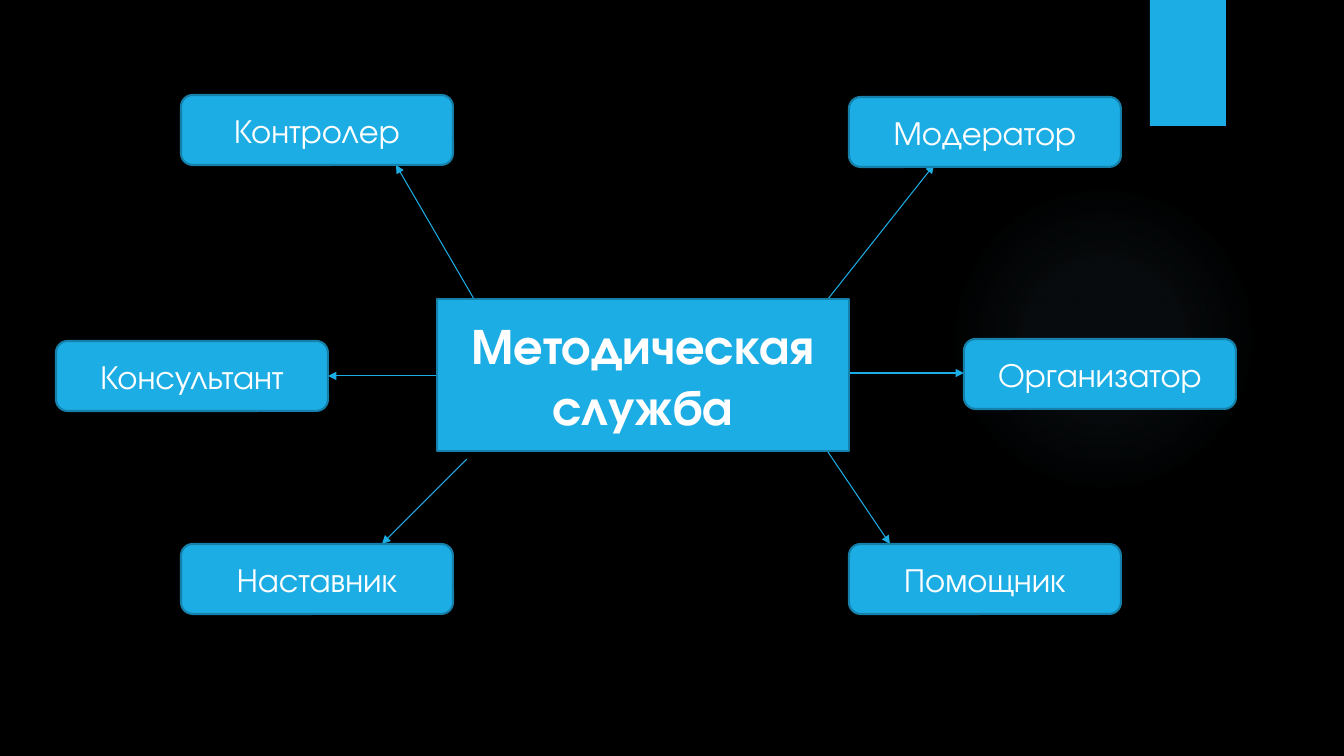
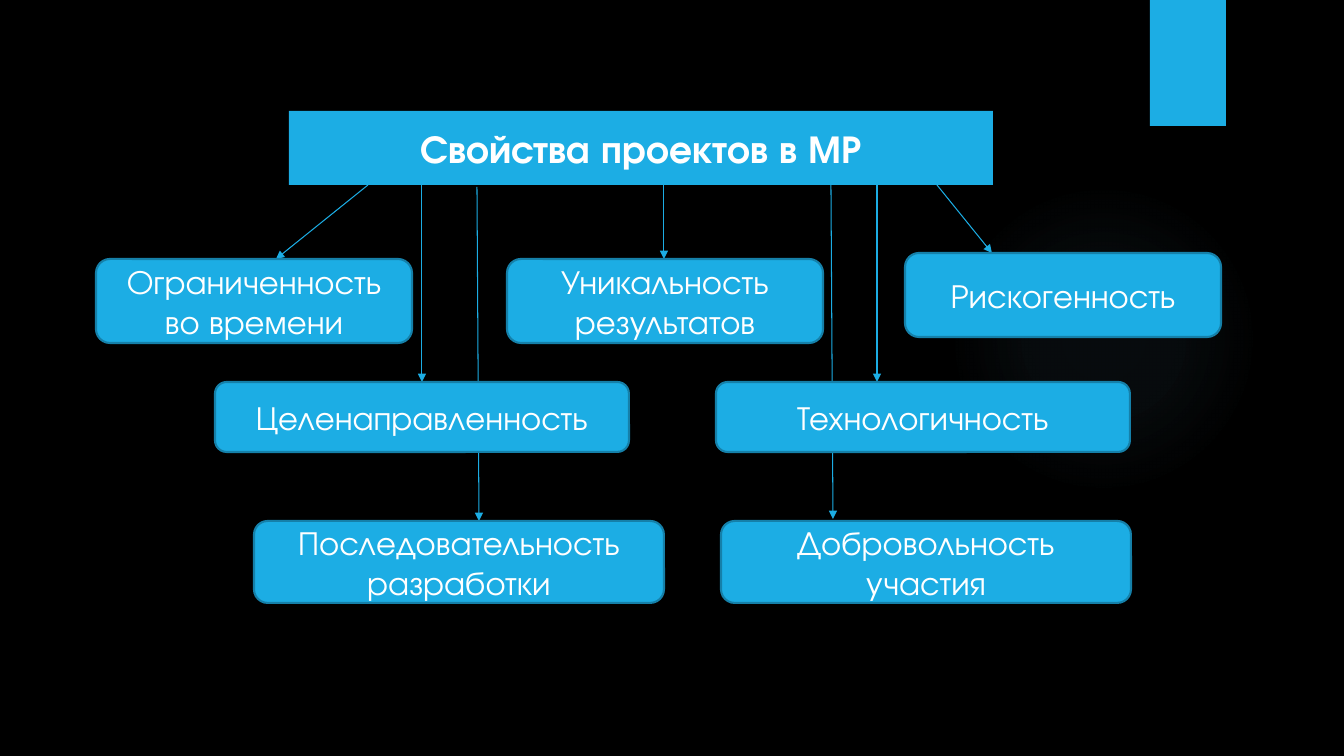
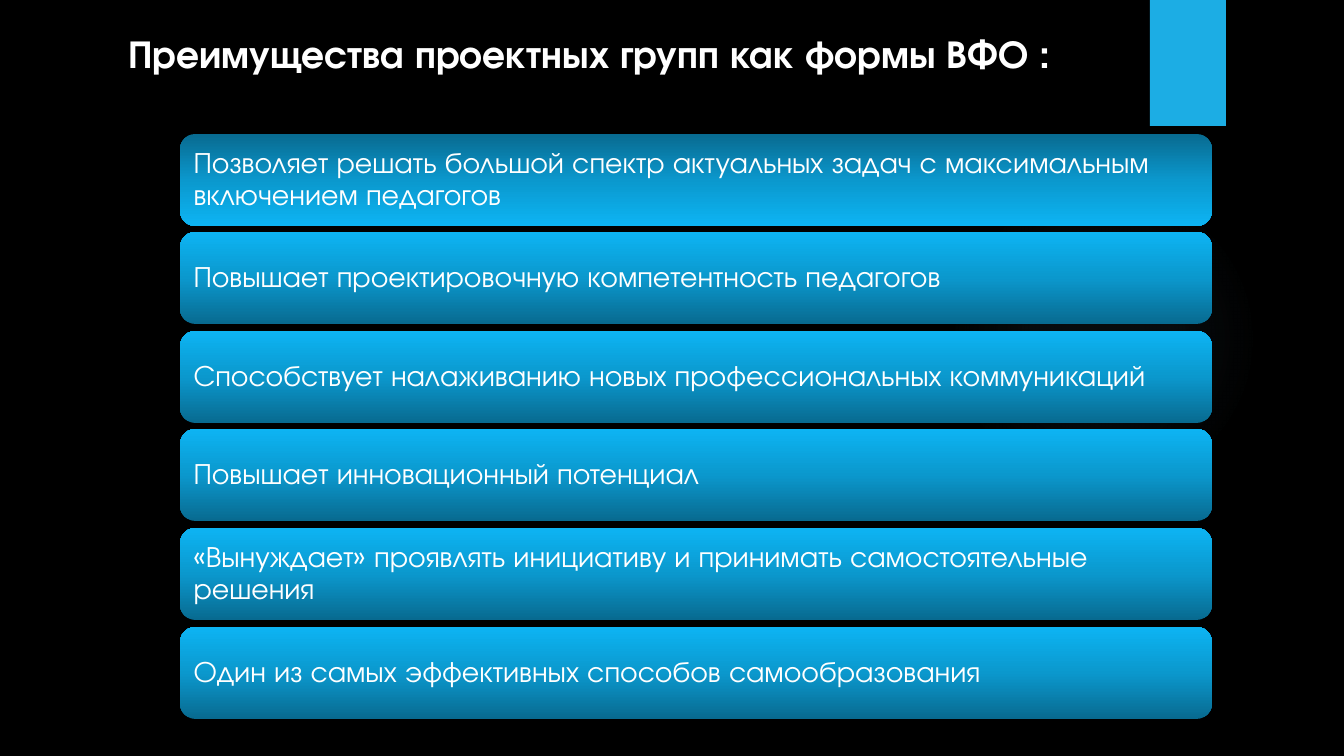
from dataclasses import dataclass

from pptx import Presentation
from pptx import oxml
from pptx import util as u
from pptx.dml.color import RGBColor
from pptx.enum import shapes, text
from pptx.oxml import ns


@dataclass(frozen=True)
class Theme:
    font: str = "TeX Gyre Adventor"
    back: str = "000000"
    ink: str = "FFFFFF"
    accent: str = "1CADE4"
    edge: str = "1580A9"
    halo: tuple = ((0, "70A1C0", 7), (36, "70A1C0", 6), (69, "70A1C0", 0))
    bar: tuple = ((0, "086A90", 100), (50, "0B98CD", 100), (100, "0DB4F3", 100))
    hub: int = 36
    title: int = 28
    node: int = 24
    item: int = 21


T = Theme()
PX = 12192000 / 1344
RECT = shapes.MSO_SHAPE.RECTANGLE
ROUND = shapes.MSO_SHAPE.ROUNDED_RECTANGLE
CENTER, LEFT = text.PP_ALIGN.CENTER, text.PP_ALIGN.LEFT
MIDDLE, TOP = text.MSO_ANCHOR.MIDDLE, text.MSO_ANCHOR.TOP


def box(s, kind, frame, words="", *, fill=T.accent, line=None, size=T.node,
        bold=False, align=CENTER, anchor=MIDDLE, spacing=None, inset=None):
    frame = [int(v * PX) for v in frame]
    if kind is None:
        sp = s.shapes.add_textbox(*frame)
    else:
        sp = s.shapes.add_shape(kind, *frame)
        sp.shadow.inherit = False
        if fill:
            sp.fill.solid()
            sp.fill.fore_color.rgb = RGBColor.from_string(fill)
        if line:
            sp.line.color.rgb = RGBColor.from_string(line)
            sp.line.width = u.Pt(1.5)
        else:
            sp.line.fill.background()
    if words:
        tf = sp.text_frame
        tf.word_wrap = True
        tf.vertical_anchor = anchor
        if inset is not None:
            tf.margin_left = tf.margin_right = int(inset * PX)
            tf.margin_top = tf.margin_bottom = int(inset * PX)
        p = tf.paragraphs[0]
        p.alignment = align
        p.line_spacing = spacing
        r = p.add_run()
        r.text = words
        r.font.name = T.font
        r.font.size = u.Pt(size)
        r.font.bold = bold
        r.font.color.rgb = RGBColor.from_string(T.ink)
    return sp


def gradient(sp, stops, shade):
    gs = "".join(
        f'<a:gs pos="{pos * 1000}"><a:srgbClr val="{color}">'
        f'<a:alpha val="{alpha * 1000}"/></a:srgbClr></a:gs>'
        for pos, color, alpha in stops)
    fill = oxml.parse_xml(
        f'<a:gradFill {ns.nsdecls("a")} rotWithShape="1">'
        f'<a:gsLst>{gs}</a:gsLst>{shade}</a:gradFill>')
    sp._element.spPr.find(ns.qn("a:prstGeom")).addnext(fill)


prs = Presentation()
prs.slide_width, prs.slide_height = u.Inches(13.3333), u.Inches(7.5)
back = prs.slide_master.background.fill
back.solid()
back.fore_color.rgb = RGBColor.from_string(T.back)

service_arrows = [
    (474, 299, 396, 165), (437, 376, 328, 376), (467, 459, 382, 544),
    (828, 299, 934, 165), (849, 373, 964, 373), (828, 452, 890, 544),
]
project_arrows = [
    (831, 185, 833, 519), (477, 187, 479, 521), (368, 185, 276, 259),
    (422, 185, 422, 382), (664, 185, 664, 259), (937, 185, 992, 253),
    (877, 185, 877, 382),
]

for arrows in (service_arrows, project_arrows, []):
    s = prs.slides.add_slide(prs.slide_layouts[6])
    halo = box(s, shapes.MSO_SHAPE.OVAL, (949, 184, 310, 310), fill=None)
    gradient(halo, T.halo, '<a:path path="circle"><a:fillToRect '
             'l="50000" t="50000" r="50000" b="50000"/></a:path>')
    box(s, RECT, (1150, 0, 76, 126))
    for ends in arrows:
        arrow = s.shapes.add_connector(
            shapes.MSO_CONNECTOR.STRAIGHT, *[int(v * PX) for v in ends])
        arrow.line.color.rgb = RGBColor.from_string(T.accent)
        arrow.line.width = u.Pt(0.75)
        ln = arrow.line._get_or_add_ln()
        ln.append(oxml.parse_xml(f'<a:tailEnd {ns.nsdecls("a")} type="triangle"/>'))
        arrow._element.spPr.append(oxml.parse_xml(f'<a:effectLst {ns.nsdecls("a")}/>'))

service, projects, benefits = prs.slides

box(service, RECT, (437, 299, 412, 152), "Методическая служба",
    line=T.edge, size=T.hub, bold=True)
for x, y, role in [
    (181, 95, "Контролер"),
    (56, 341, "Консультант"),
    (181, 544, "Наставник"),
    (849, 97, "Модератор"),
    (964, 339, "Организатор"),
    (849, 544, "Помощник"),
]:
    box(service, ROUND, (x, y, 272, 70), role, line=T.edge)

box(projects, RECT, (289, 111, 704, 74), "Свойства проектов в МР",
    size=T.title, bold=True)
for x, y, w, h, trait in [
    (96, 259, 316, 84, "Ограниченность во времени"),
    (507, 259, 316, 84, "Уникальность результатов"),
    (905, 253, 316, 84, "Рискогенность"),
    (215, 382, 414, 70, "Целенаправленность"),
    (716, 382, 414, 70, "Технологичность"),
    (254, 521, 410, 82, "Последовательность разработки"),
    (721, 521, 410, 82, "Добровольность участия"),
]:
    box(projects, ROUND, (x, y, w, h), trait, line=T.edge)

box(benefits, None, (38, 24, 1103, 57),
    "Преимущества проектных групп как формы ВФО :",
    size=T.title, bold=True, anchor=TOP)
for i, benefit in enumerate([
    "Позволяет решать большой спектр актуальных задач с максимальным включением педагогов",
    "Повышает проектировочную компетентность педагогов",
    "Способствует налаживанию новых профессиональных коммуникаций",
    "Повышает инновационный потенциал",
    "«Вынуждает» проявлять инициативу и принимать самостоятельные решения",
    "Один из самых эффективных способов самообразования",
]):
    bar = box(benefits, ROUND, (180, 134 + 493 * i // 5, 1032, 92), benefit,
              fill=None, size=T.item, align=LEFT, spacing=0.9, inset=9)
    angle = 270 if i else 90
    gradient(bar, T.bar, f'<a:lin ang="{angle * 60000}" scaled="0"/>')

prs.save("out.pptx")
